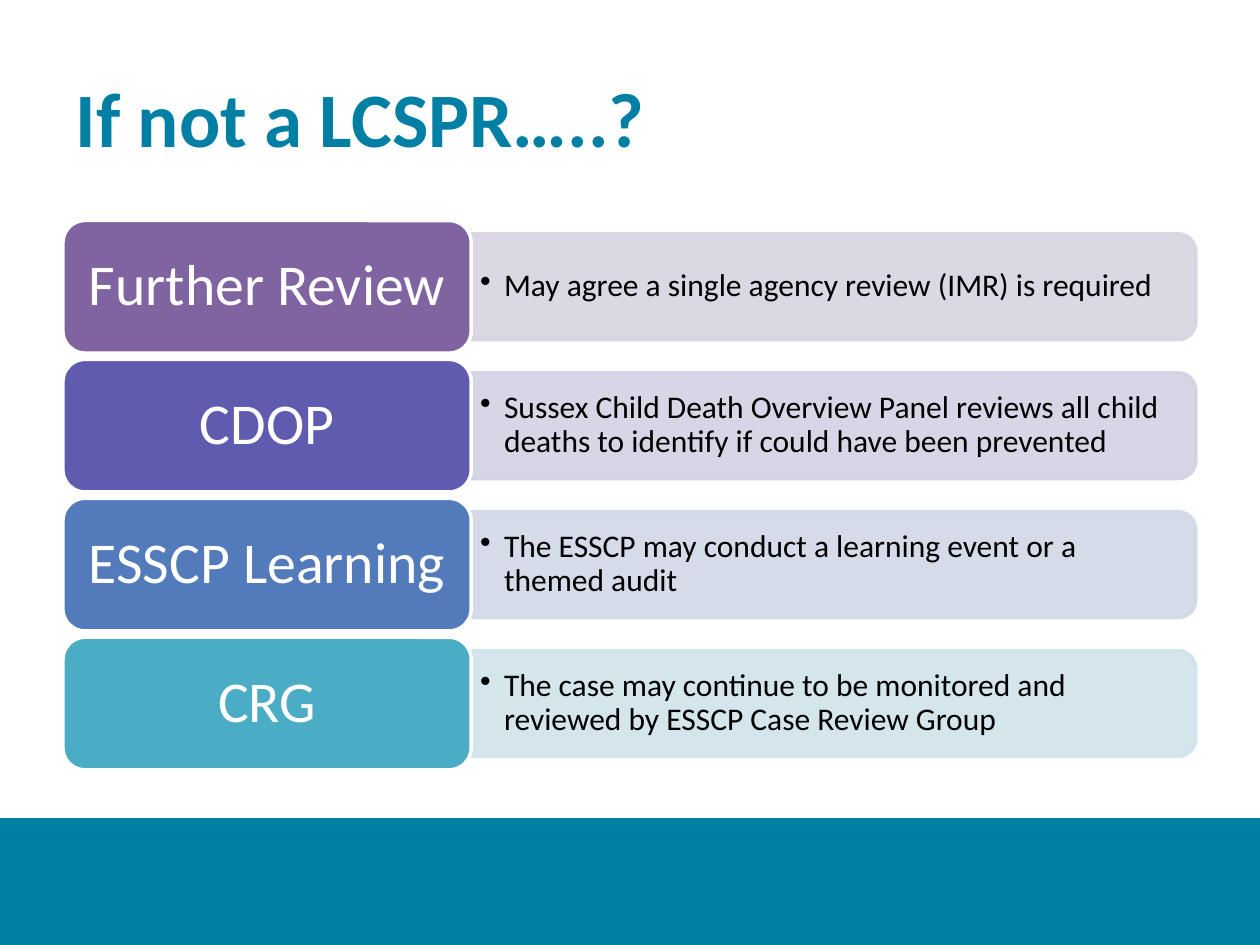
from lxml.etree import SubElement
from pptx import Presentation
from pptx.dml.color import RGBColor
from pptx.enum.shapes import MSO_SHAPE
from pptx.enum.text import MSO_ANCHOR, PP_ALIGN
from pptx.oxml.ns import qn
from pptx.util import Inches, Pt

# Content: label, detail, label colour, panel colour
TITLE = "If not a LCSPR…..?"
ROWS = [
    ("Further Review", "May agree a single agency review (IMR) is required",
     "purple", "pale_purple"),
    ("CDOP", "Sussex Child Death Overview Panel reviews all child deaths "
     "to identify if could have been prevented", "indigo", "pale_indigo"),
    ("ESSCP Learning", "The ESSCP may conduct a learning event or a themed audit",
     "blue", "pale_blue"),
    ("CRG", "The case may continue to be monitored and reviewed by "
     "ESSCP Case Review Group", "aqua", "pale_aqua"),
]
COLOURS = {
    "teal": "007FA5", "white": "FFFFFF", "black": "000000",
    "purple": "8064A2", "indigo": "5F5BAE", "blue": "537ABA", "aqua": "4BACC6",
    "pale_purple": "D8D3E0", "pale_indigo": "D2D2E4",
    "pale_blue": "D1D8E7", "pale_aqua": "D0E3EA",
}

# Row geometry in inches
LEFT, TOP, BOTTOM, GAP = 0.5, 1.75, 6.11, 0.05
LABEL_WIDTH, PANEL_WIDTH, PANEL_HEIGHT = 3.24, 5.75, 0.84
LABEL_HEIGHT = (BOTTOM - TOP - GAP * (len(ROWS) - 1)) / len(ROWS)


def colour(name):
    return RGBColor.from_string(COLOURS[name])


def add_block(slide, preset, box, fill, line, opacity=100):
    shape = slide.shapes.add_shape(preset, *map(Inches, box))
    shape.shadow.inherit = False
    shape.fill.solid()
    shape.fill.fore_color.rgb = colour(fill)
    shape.line.color.rgb = colour(line)
    shape.line.width = Pt(2)
    if opacity < 100:
        for element in shape._element.spPr.iter(qn("a:srgbClr")):
            SubElement(element, qn("a:alpha"), val=str(opacity * 1000))
    return shape


def write(shape, text, size, colour_name, margins=(0.1, 0.05), bold=False,
          align=PP_ALIGN.LEFT, spacing=0.9, bullet=False):
    frame = shape.text_frame
    frame.word_wrap = True
    frame.vertical_anchor = MSO_ANCHOR.MIDDLE
    frame.margin_left = frame.margin_right = Inches(margins[0])
    frame.margin_top = frame.margin_bottom = Inches(margins[1])
    frame.text = text
    paragraph = frame.paragraphs[0]
    paragraph.alignment = align
    paragraph.line_spacing = spacing
    if bullet:
        properties = paragraph._p.get_or_add_pPr()
        properties.set("marL", str(Inches(0.19)))
        properties.set("indent", str(Inches(-0.19)))
        SubElement(properties, qn("a:buChar"), char="•")
    paragraph.font.name = "Calibri"
    paragraph.font.size = Pt(size)
    paragraph.font.bold = bold
    paragraph.font.color.rgb = colour(colour_name)


presentation = Presentation()
presentation.slide_width, presentation.slide_height = Inches(10), Inches(7.5)
slide = presentation.slides.add_slide(presentation.slide_layouts[5])

# Footer band
add_block(slide, MSO_SHAPE.RECTANGLE, (0, 6.51, 10, 0.99), "teal", "teal")

# Title
title = slide.shapes.title
title.left, title.top = Inches(0.5), Inches(0.3)
title.width, title.height = Inches(9), Inches(1.25)
write(title, TITLE, 44, "teal", bold=True, spacing=1.0)

# Rows: detail panel, its text, then the label
panel_left = LEFT + LABEL_WIDTH
for index, (label, detail, label_fill, panel_fill) in enumerate(ROWS):
    top = TOP + index * (LABEL_HEIGHT + GAP)
    middle = top + LABEL_HEIGHT / 2

    # The panel is an upright shape turned a quarter about its centre
    panel = add_block(
        slide, MSO_SHAPE.ROUND_2_SAME_RECTANGLE,
        (panel_left + (PANEL_WIDTH - PANEL_HEIGHT) / 2, middle - PANEL_WIDTH / 2,
         PANEL_HEIGHT, PANEL_WIDTH), panel_fill, panel_fill, opacity=90)
    panel.rotation = 90

    detail_box = slide.shapes.add_textbox(
        Inches(panel_left), Inches(middle - 0.38), Inches(5.71), Inches(0.76))
    write(detail_box, detail, 18, "black", margins=(0.07, 0.04), bullet=True)

    label_block = add_block(slide, MSO_SHAPE.ROUNDED_RECTANGLE,
                            (LEFT, top, LABEL_WIDTH, LABEL_HEIGHT),
                            label_fill, "white")
    write(label_block, label, 33, "white", margins=(0.13, 0.07),
          align=PP_ALIGN.CENTER)

presentation.save("out.pptx")
